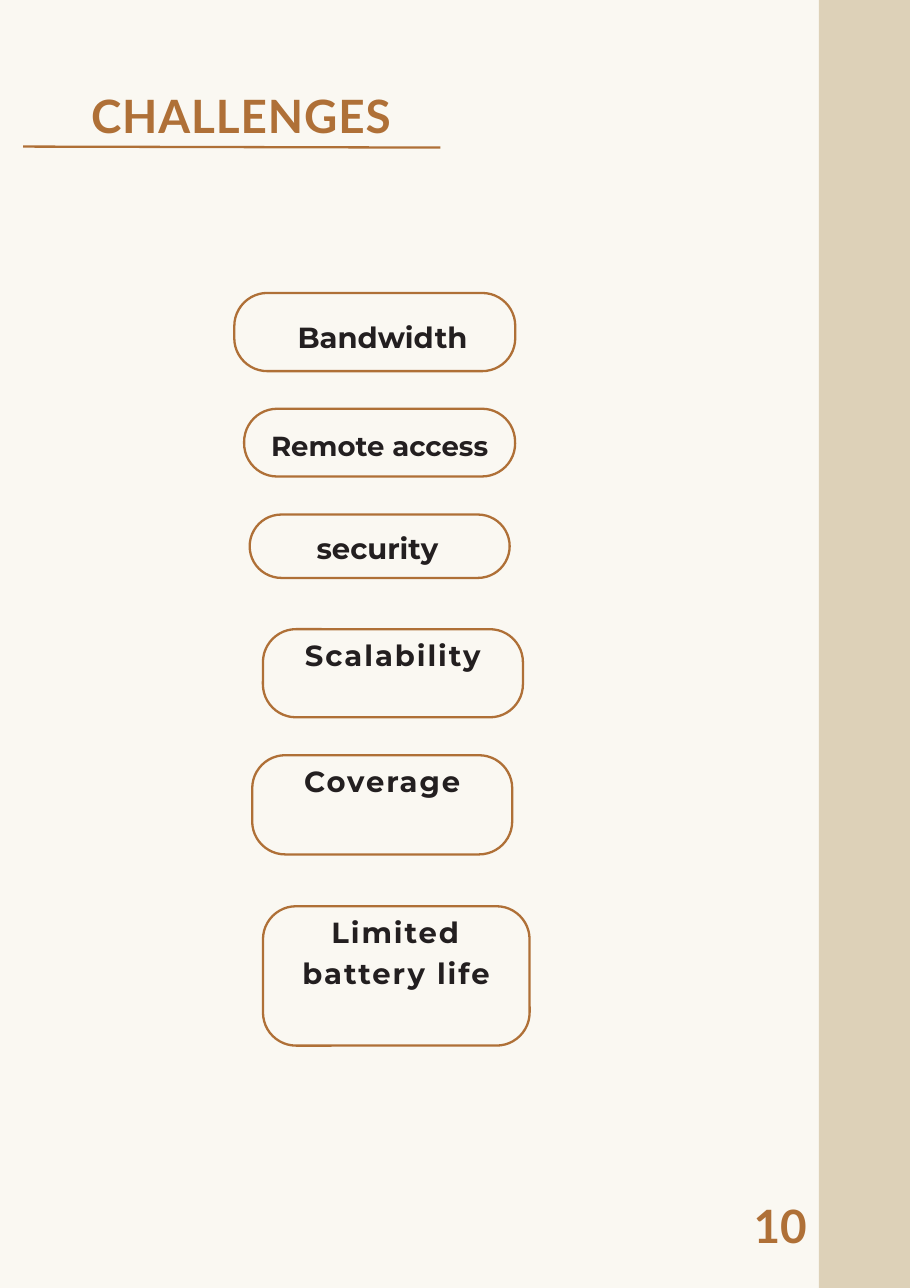
from pptx import Presentation
from pptx.dml.color import RGBColor
from pptx.enum.shapes import MSO_CONNECTOR, MSO_SHAPE
from pptx.enum.text import MSO_ANCHOR, MSO_AUTO_SIZE, PP_ALIGN
from pptx.oxml.ns import qn
from pptx.util import Inches, Pt
from lxml import etree

LINE = MSO_CONNECTOR.STRAIGHT
RECT = MSO_SHAPE.RECTANGLE
ROUND = MSO_SHAPE.ROUNDED_RECTANGLE
TOP = MSO_ANCHOR.TOP
FIXED = MSO_AUTO_SIZE.NONE
LEFT, MID = PP_ALIGN.LEFT, PP_ALIGN.CENTER

WIDE, HIGH = Inches(8.26), Inches(11.69)
PAPER, SAND, RUST, INK = "FAF8F2", "DDD1B8", "AF7037", "231F20"
HEAD, BODY = "Lato", "Montserrat"
CURVE = Inches(0.3)
INSET = 1

PILLS = [
    ("Bandwidth", (25.75, 22.75, 30.87, 6.07), 0.85, 1.63, 19, 0),
    ("Remote access", (26.83, 31.74, 29.78, 5.26), 0, 1.11, 18, 0),
    ("security", (27.44, 39.95, 28.57, 4.92), -0.25, 0.8, 19, 0),
    ("Scalability", (28.9, 48.85, 28.57, 6.84), 0, 0.2, 19, 1.3),
    ("Coverage", (27.72, 58.64, 28.57, 7.7), 0, 0.2, 19, 1.3),
    ("Limited battery life", (28.9, 70.36, 29.3, 10.82), 0, 0.2, 19, 1.3),
]


def color(code):
    """Turn a hex string into a colour."""
    return RGBColor.from_string(code)


def place(left, top, width, height):
    """Turn percentages of the slide into a position and size."""
    return (int(WIDE * left / 100), int(HIGH * top / 100),
            int(WIDE * width / 100), int(HIGH * height / 100))


def write(shape, text, font, size, tint, align, pitch, track=0):
    """Fill a shape with one bold paragraph set from its top edge."""
    frame = shape.text_frame
    frame.word_wrap = True
    frame.auto_size = FIXED
    frame.vertical_anchor = TOP
    frame.margin_left = frame.margin_right = 0
    frame.margin_top = frame.margin_bottom = 0
    para = frame.paragraphs[0]
    run = para.add_run()
    run.text = text
    para.alignment = align
    para.line_spacing = Pt(pitch)
    para.font.name = font
    para.font.size = Pt(size)
    para.font.bold = True
    para.font.color.rgb = color(tint)
    if track:
        run._r.get_or_add_rPr().set("spc", str(round(track * 100)))


def add_title(slide, text, box):
    """Move and format the title placeholder."""
    title = slide.shapes.title
    title.left, title.top, title.width, title.height = place(*box)
    write(title, text, HEAD, 30, RUST, LEFT, 35.4, 0.6)


def add_label(slide, text, box, *style):
    """Add a text box in the given style."""
    write(slide.shapes.add_textbox(*place(*box)), text, *style)


def add_band(slide, box):
    """Add a plain coloured band."""
    band = slide.shapes.add_shape(RECT, *place(*box))
    band.shadow.inherit = False
    band.fill.solid()
    band.fill.fore_color.rgb = color(SAND)
    band.line.fill.background()


def add_rule(slide, start, end):
    """Add a thin line between two points."""
    rule = slide.shapes.add_connector(LINE, *place(*start, *end))
    rule.line.color.rgb = color(RUST)
    rule.line.width = Pt(1.5)
    etree.SubElement(rule._element.spPr, qn("a:effectLst"))


def add_pill(slide, text, box, shift, drop, size, track):
    """Add an outlined pill with its label kept clear of the sides."""
    pill = slide.shapes.add_shape(ROUND, *place(*box))
    pill.shadow.inherit = False
    pill.adjustments[0] = min(0.5, CURVE / pill.height)
    pill.fill.background()
    pill.line.color.rgb = color(RUST)
    pill.line.width = Pt(1.5)
    left, top, width, height = box
    area = (left + shift + INSET, top + drop,
            width - 2 * INSET, height - drop)
    add_label(slide, text, area, BODY, size, INK, MID, size * 1.4, track)


def main():
    """Build the slide and save it."""
    deck = Presentation()
    deck.slide_width, deck.slide_height = WIDE, HIGH
    slide = deck.slides.add_slide(deck.slide_layouts[5])
    slide.background.fill.solid()
    slide.background.fill.fore_color.rgb = color(PAPER)
    add_band(slide, (90, 0, 10, 100))
    add_title(slide, "CHALLENGES", (10, 6.88, 40.07, 8.64))
    add_rule(slide, (2.54, 11.38), (48.4, 11.46))
    for pill in PILLS:
        add_pill(slide, *pill)
    add_label(slide, "10", (81.44, 93.02, 8.6, 4.45),
              HEAD, 30, RUST, MID, 35.4)
    deck.save("out.pptx")


if __name__ == "__main__":
    main()
